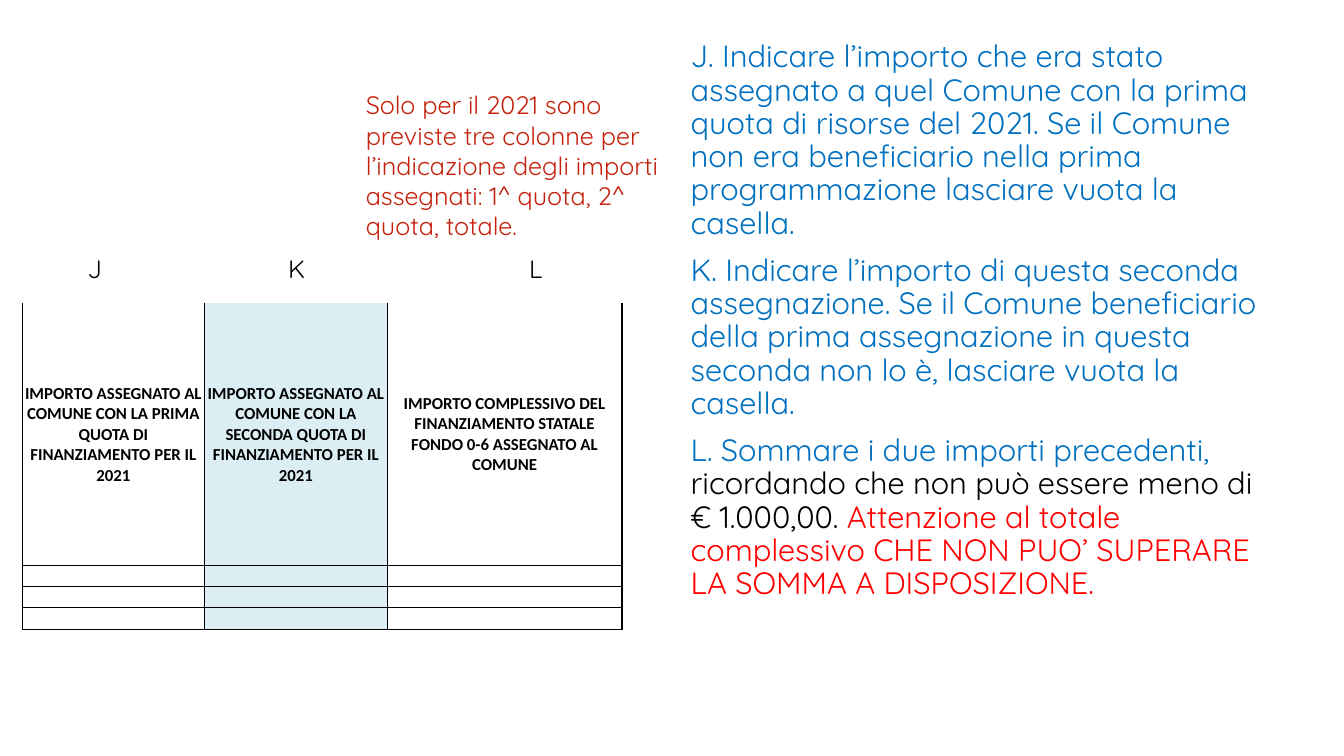
from dataclasses import dataclass

from lxml import etree
from pptx import Presentation
from pptx import util as u
from pptx.dml.color import RGBColor
from pptx.enum import text
from pptx.oxml import ns

COLORS = {
    "black": "000000",
    "blue": "0070C0",
    "red": "FF0000",
    "brick": "C4220D",
    "pale_blue": "DAEEF3",
    "white": "FFFFFF",
}
TEXT_FONT = "Quicksand"
TABLE_FONT = "Calibri"
ROW_HEIGHTS = (2.6, 0.21, 0.21, 0.21)


@dataclass(frozen=True)
class Span:
    """A stretch of text in one colour."""
    content: str
    color: str


@dataclass(frozen=True)
class Label:
    """A text box with its place in inches."""
    left: float
    top: float
    width: float
    height: float
    span: Span


@dataclass(frozen=True)
class Column:
    """A table column with its heading."""
    heading: str
    width: float
    fill: str


INSTRUCTIONS = (
    (Span("J. Indicare l’importo che era stato assegnato a quel Comune con la prima quota di "
          "risorse del 2021. Se il Comune non era beneficiario nella prima programmazione "
          "lasciare vuota la casella.", "blue"),),
    (Span("K. Indicare l’importo di questa seconda assegnazione. Se il Comune beneficiario "
          "della prima assegnazione in questa seconda non lo è, lasciare vuota la casella.",
          "blue"),),
    (Span("L. Sommare i due importi precedenti, ", "blue"),
     Span("ricordando che non può essere meno di € 1.000,00. ", "black"),
     Span("Attenzione al totale complessivo CHE NON PUO’ SUPERARE LA SOMMA A DISPOSIZIONE.",
          "red")),
)
LABELS = (
    *(Label(left, 2.46, 0.39, 0.4, Span(letter, "black"))
      for letter, left in (("J", 0.77), ("K", 2.76), ("L", 5.15))),
    Label(3.53, 0.84, 3.3, 1.62,
          Span("Solo per il 2021 sono previste tre colonne per l’indicazione degli importi "
               "assegnati: 1^ quota, 2^ quota, totale.", "brick")),
)
COLUMNS = (
    Column("IMPORTO ASSEGNATO AL COMUNE CON LA PRIMA QUOTA DI FINANZIAMENTO PER IL 2021",
           1.81, "white"),
    Column("IMPORTO ASSEGNATO AL COMUNE CON LA SECONDA QUOTA DI FINANZIAMENTO PER IL 2021",
           1.81, "pale_blue"),
    Column("IMPORTO COMPLESSIVO DEL FINANZIAMENTO STATALE FONDO 0-6 ASSEGNATO AL COMUNE",
           2.33, "white"),
)


def add_run(paragraph, span: Span, size: float, font: str = TEXT_FONT, bold: bool = False) -> None:
    """Append a formatted run to a paragraph."""
    run = paragraph.add_run()
    run.text = span.content
    run.font.name = font
    run.font.size = u.Pt(size)
    run.font.bold = bold
    run.font.color.rgb = RGBColor.from_string(COLORS[span.color])


def set_borders(cell, widths: dict[str, float]) -> None:
    """Draw black cell borders, with zero width for none."""
    properties = cell._tc.get_or_add_tcPr()
    for position, (side, width) in enumerate(widths.items()):
        line = etree.Element(ns.qn(f"a:ln{side}"), w=str(u.Pt(width)))
        if width:
            fill = etree.SubElement(line, ns.qn("a:solidFill"))
            etree.SubElement(fill, ns.qn("a:srgbClr"), val=COLORS["black"])
        else:
            etree.SubElement(line, ns.qn("a:noFill"))
        properties.insert(position, line)


def add_amounts_table(slide) -> None:
    """Add the table of assigned amounts."""
    frame = slide.shapes.add_table(
        len(ROW_HEIGHTS), len(COLUMNS), u.Inches(0.22), u.Inches(3.01),
        u.Inches(sum(column.width for column in COLUMNS)), u.Inches(sum(ROW_HEIGHTS)))
    table = frame.table
    table.first_row = table.horz_banding = False
    for row, height in zip(table.rows, ROW_HEIGHTS):
        row.height = u.Inches(height)
    for column_index, column in enumerate(COLUMNS):
        table.columns[column_index].width = u.Inches(column.width)
        for row_index in range(len(ROW_HEIGHTS)):
            cell = table.cell(row_index, column_index)
            cell.margin_left = cell.margin_right = cell.margin_top = cell.margin_bottom = 0
            cell.vertical_anchor = text.MSO_ANCHOR.MIDDLE
            cell.fill.solid()
            cell.fill.fore_color.rgb = RGBColor.from_string(COLORS[column.fill])
            top = (0, 1, 0.5, 0.5)[row_index]
            bottom = 0.5 if row_index else 1
            set_borders(cell, {"L": 1, "R": 1, "T": top, "B": bottom})
            paragraph = cell.text_frame.paragraphs[0]
            if row_index == 0:
                paragraph.alignment = text.PP_ALIGN.CENTER
                add_run(paragraph, Span(column.heading, "black"), 12, TABLE_FONT, True)
            else:
                etree.SubElement(paragraph._p, ns.qn("a:endParaRPr"), sz="1000")


def add_instructions(slide) -> None:
    """Fill the body placeholder with the instructions."""
    body = slide.placeholders[1]
    body.left, body.top = u.Inches(6.75), u.Inches(0.36)
    body.width, body.height = u.Inches(5.83), u.Inches(6.44)
    frame = body.text_frame
    frame.auto_size = text.MSO_AUTO_SIZE.NONE
    for index, spans in enumerate(INSTRUCTIONS):
        paragraph = frame.add_paragraph() if index else frame.paragraphs[0]
        properties = paragraph._p.get_or_add_pPr()
        properties.set("marL", "0")
        properties.set("indent", "0")
        etree.SubElement(properties, ns.qn("a:buNone"))
        paragraph.line_spacing = 0.9
        paragraph.space_before = u.Pt(10 if index else 0)
        for span in spans:
            add_run(paragraph, span, 22)


def add_label(slide, label: Label) -> None:
    """Add a wrapped text box."""
    box = slide.shapes.add_textbox(u.Inches(label.left), u.Inches(label.top),
                                   u.Inches(label.width), u.Inches(label.height))
    box.text_frame.word_wrap = True
    box.text_frame.auto_size = text.MSO_AUTO_SIZE.SHAPE_TO_FIT_TEXT
    add_run(box.text_frame.paragraphs[0], label.span, 18)


def main() -> None:
    """Build and save the slide."""
    presentation = Presentation()
    presentation.slide_width = u.Inches(13.33)
    presentation.slide_height = u.Inches(7.5)
    slide = presentation.slides.add_slide(presentation.slide_layouts[1])
    title = slide.shapes.title
    title.element.getparent().remove(title.element)
    add_amounts_table(slide)
    add_instructions(slide)
    for label in LABELS:
        add_label(slide, label)
    presentation.save("out.pptx")


if __name__ == "__main__":
    main()
